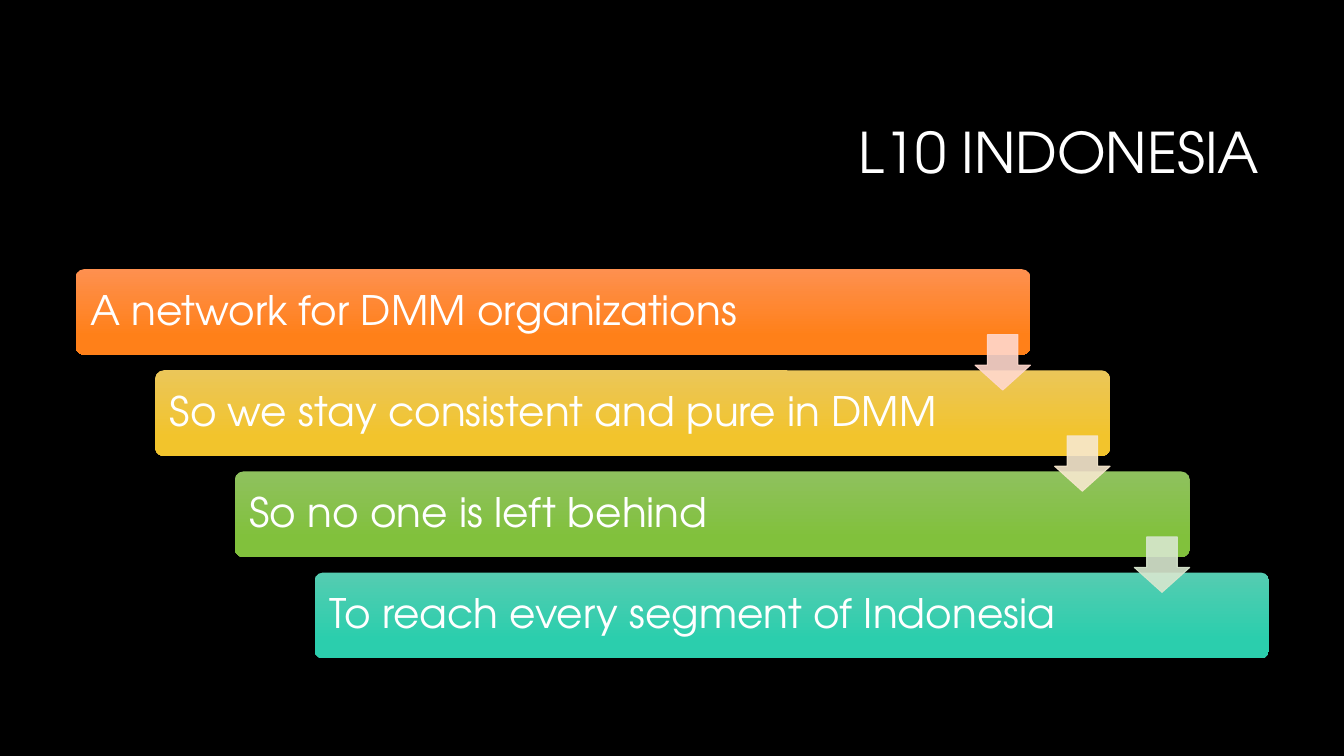
from lxml import etree
from pptx import Presentation
from pptx.dml.color import RGBColor
from pptx.enum import shapes, text
from pptx.oxml.ns import qn
from pptx.util import Inches, Pt

# Content: text, gradient top, gradient bottom
TITLE = "L10 INDONESIA"
STEPS = [
    ("A network for DMM organizations", "FE904F", "FF8019"),
    ("So we stay consistent and pure in DMM", "EBC659", "F2C42C"),
    ("So no one is left behind", "8FC15E", "81C13C"),
    ("To reach every segment of Indonesia", "55CCB1", "2BCEAD"),
]
ARROW_COLORS = ["FFD8CD", "F7E8CE", "D8E7CF"]
FONT = "TeX Gyre Adventor"

# Staircase layout, in inches
LEFT, TOP = 0.75, 2.67
BAR_W, BAR_H = 9.47, 0.85
STEP_X, STEP_Y = 0.79, (5.68 - TOP) / 3
ARROW, ARROW_DROP = 0.55, 0.65


def rgb(color):
    return RGBColor.from_string(color)


def write(tf, words, size, align):
    tf.word_wrap = True
    tf.vertical_anchor = text.MSO_ANCHOR.MIDDLE
    p = tf.paragraphs[0]
    p.alignment = align
    p.line_spacing = 0.9
    r = p.add_run()
    r.text = words
    r.font.size = Pt(size)
    r.font.name = FONT
    r.font.color.rgb = rgb(color="FFFFFF")


def add_shape(slide, kind, x, y, w, h, adjustments):
    sp = slide.shapes.add_shape(kind, Inches(x), Inches(y), Inches(w), Inches(h))
    sp.shadow.inherit = False
    for i, value in enumerate(adjustments):
        sp.adjustments[i] = value
    return sp


def add_bar(slide, x, y, words, top_color, bottom_color):
    sp = add_shape(slide, shapes.MSO_SHAPE.ROUNDED_RECTANGLE, x, y, BAR_W, BAR_H, [0.1])
    sp.line.fill.background()
    sp.fill.gradient()
    sp.fill.gradient_angle = 270
    stops = zip(sp.fill.gradient_stops, (0, 0.78), (top_color, bottom_color))
    for stop, position, color in stops:
        stop.position = position
        stop.color.rgb = rgb(color)
    tf = sp.text_frame
    tf.margin_left = tf.margin_right = tf.margin_top = tf.margin_bottom = Inches(0.12)
    write(tf, words, 29, text.PP_ALIGN.LEFT)


def add_arrow(slide, x, y, color):
    sp = add_shape(slide, shapes.MSO_SHAPE.DOWN_ARROW, x, y, ARROW, ARROW, [0.55, 0.45])
    sp.fill.solid()
    sp.fill.fore_color.rgb = rgb(color)
    sp.line.color.rgb = rgb(color)
    sp.line.width = Pt(0.75)
    # 90% opacity on both fill and line
    for clr in sp._element.spPr.iter(qn("a:srgbClr")):
        etree.SubElement(clr, qn("a:alpha")).set("val", "90000")


def main():
    prs = Presentation()
    prs.slide_width, prs.slide_height = Inches(13.33), Inches(7.5)
    s = prs.slides.add_slide(prs.slide_layouts[5])
    s.background.fill.solid()
    s.background.fill.fore_color.rgb = rgb("000000")

    # Title
    title = s.shapes.title
    title.left, title.top = Inches(3.17), Inches(0.84)
    title.width, title.height = Inches(9.42), Inches(1.41)
    write(title.text_frame, TITLE, 40, text.PP_ALIGN.RIGHT)

    # Bars stepping down to the right
    for i, step in enumerate(STEPS):
        add_bar(s, LEFT + i * STEP_X, TOP + i * STEP_Y, *step)

    # Arrows at the right end of each bar, pointing to the next one
    for i, color in enumerate(ARROW_COLORS):
        x = LEFT + i * STEP_X + BAR_W - ARROW
        add_arrow(s, x, TOP + i * STEP_Y + ARROW_DROP, color)

    prs.save("out.pptx")


if __name__ == "__main__":
    main()
